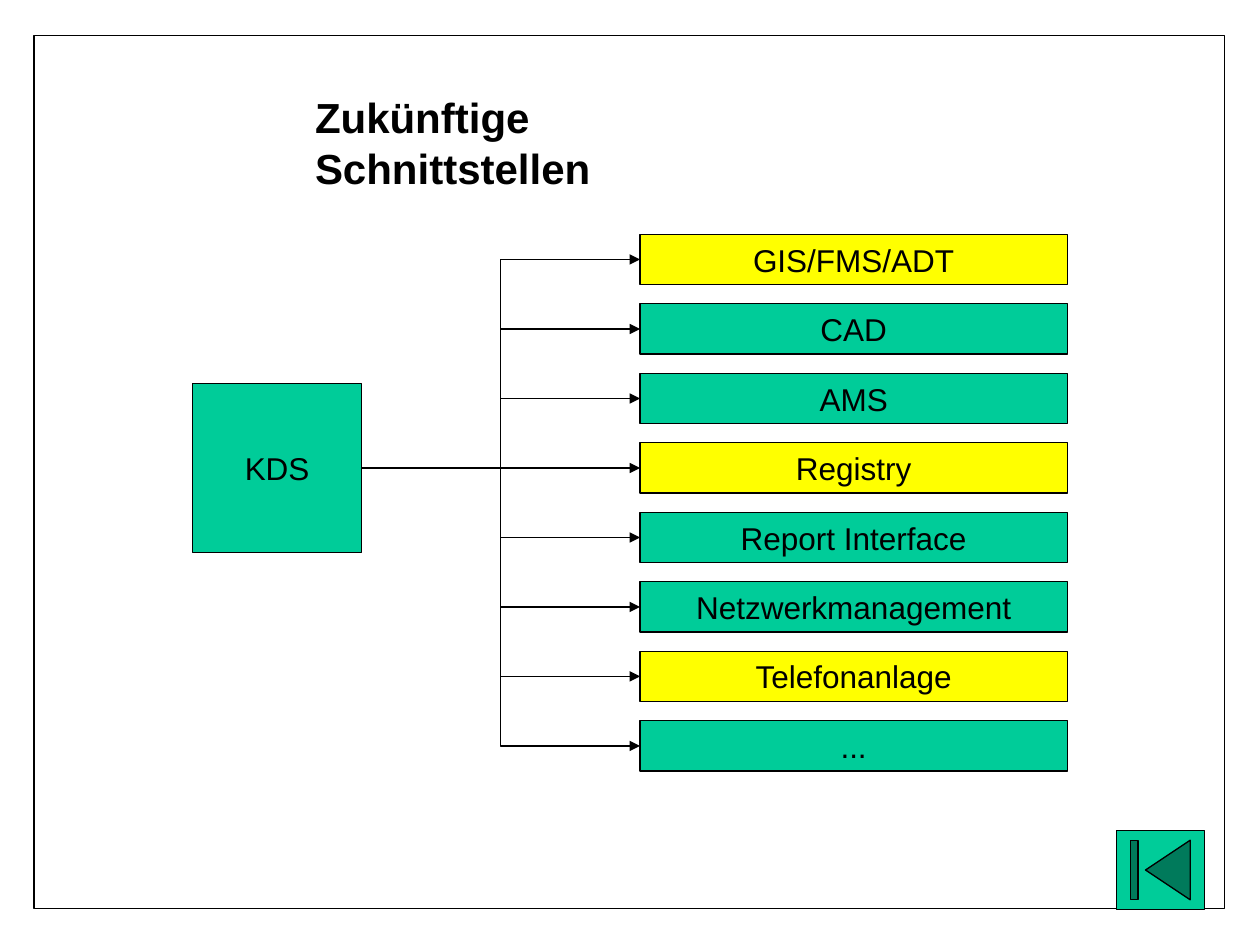
from pptx import Presentation
from pptx.dml.color import RGBColor
from pptx.enum import shapes, text
from pptx.oxml import ns
from pptx.util import Inches, Pt
from lxml import etree

BLACK, GREEN, YELLOW = "000000", "00CC99", "FFFF00"
RIGHT_SIDE, LEFT_SIDE = 3, 1
INTERFACES = [
    ("GIS/FMS/ADT", YELLOW),
    ("CAD", GREEN),
    ("AMS", GREEN),
    ("Registry", YELLOW),
    ("Report Interface", GREEN),
    ("Netzwerkmanagement", GREEN),
    ("Telefonanlage", YELLOW),
    ("...", GREEN),
]


def color(value):
    return RGBColor.from_string(value)


def set_font(paragraph, size, bold=False):
    formats = {"name": "Arial", "size": Pt(size), "bold": bold}
    for name, value in formats.items():
        setattr(paragraph.font, name, value)
    paragraph.font.color.rgb = color(BLACK)


def set_line(line):
    line.color.rgb = color(BLACK)
    line.width = Pt(0.75)


def add_box(slide, box, fill=None, label="", kind=shapes.MSO_SHAPE.RECTANGLE):
    shape = slide.shapes.add_shape(kind, *map(Inches, box))
    shape.shadow.inherit = False
    set_line(shape.line)
    if fill:
        shape.fill.solid()
        shape.fill.fore_color.rgb = color(fill)
    else:
        shape.fill.background()
    if label:
        frame = shape.text_frame
        frame.word_wrap = False
        frame.vertical_anchor = text.MSO_ANCHOR.MIDDLE
        paragraph = frame.paragraphs[0]
        paragraph.text = label
        paragraph.alignment = text.PP_ALIGN.CENTER
        set_font(paragraph, 18)
    return shape


def add_arrow(slide, source, target):
    """Join the right side of source to the left side of target."""
    arrow = slide.shapes.add_connector(shapes.MSO_CONNECTOR.ELBOW, 0, 0, 0, 0)
    arrow.begin_connect(source, RIGHT_SIDE)
    arrow.end_connect(target, LEFT_SIDE)
    set_line(arrow.line)
    line = arrow.line._get_or_add_ln()
    etree.SubElement(line, ns.qn("a:tailEnd"), type="triangle")
    etree.SubElement(arrow._element.spPr, ns.qn("a:effectLst"))


def add_title(slide, box, label):
    title = slide.shapes.title
    title.left, title.top, title.width, title.height = map(Inches, box)
    frame = title.text_frame
    frame.word_wrap = False
    frame.auto_size = text.MSO_AUTO_SIZE.NONE
    frame.vertical_anchor = text.MSO_ANCHOR.TOP
    paragraph = frame.paragraphs[0]
    paragraph.text = label
    paragraph.alignment = text.PP_ALIGN.LEFT
    set_font(paragraph, 24, bold=True)


def add_interface_diagram(slide, box):
    """Put the system on the left, joined to a column of interfaces."""
    left, top, width, height = box
    system_size, column_width, row_height = 1.34, 3.39, 0.4
    pitch = (height - row_height) / (len(INTERFACES) - 1)
    system_top = top + 3 * pitch + (row_height - system_size) / 2
    system = add_box(slide, (left, system_top, system_size, system_size), GREEN, "KDS")
    column_left = left + width - column_width
    for row, (label, fill) in enumerate(INTERFACES):
        row_box = (column_left, top + row * pitch, column_width, row_height)
        add_arrow(slide, system, add_box(slide, row_box, fill, label))


def main():
    presentation = Presentation()
    presentation.slide_width = Inches(10)
    presentation.slide_height = Inches(7.5)
    slide = presentation.slides.add_slide(presentation.slide_layouts[5])
    add_box(slide, (0.27, 0.28, 9.45, 6.93))
    add_title(slide, (2.4, 0.68, 4.18, 0.5), "Zukünftige Schnittstellen")
    add_interface_diagram(slide, (1.53, 1.86, 6.94, 4.26))
    add_box(slide, (8.86, 6.59, 0.7, 0.63), GREEN,
            kind=shapes.MSO_SHAPE.ACTION_BUTTON_BEGINNING)
    presentation.save("out.pptx")


if __name__ == "__main__":
    main()
